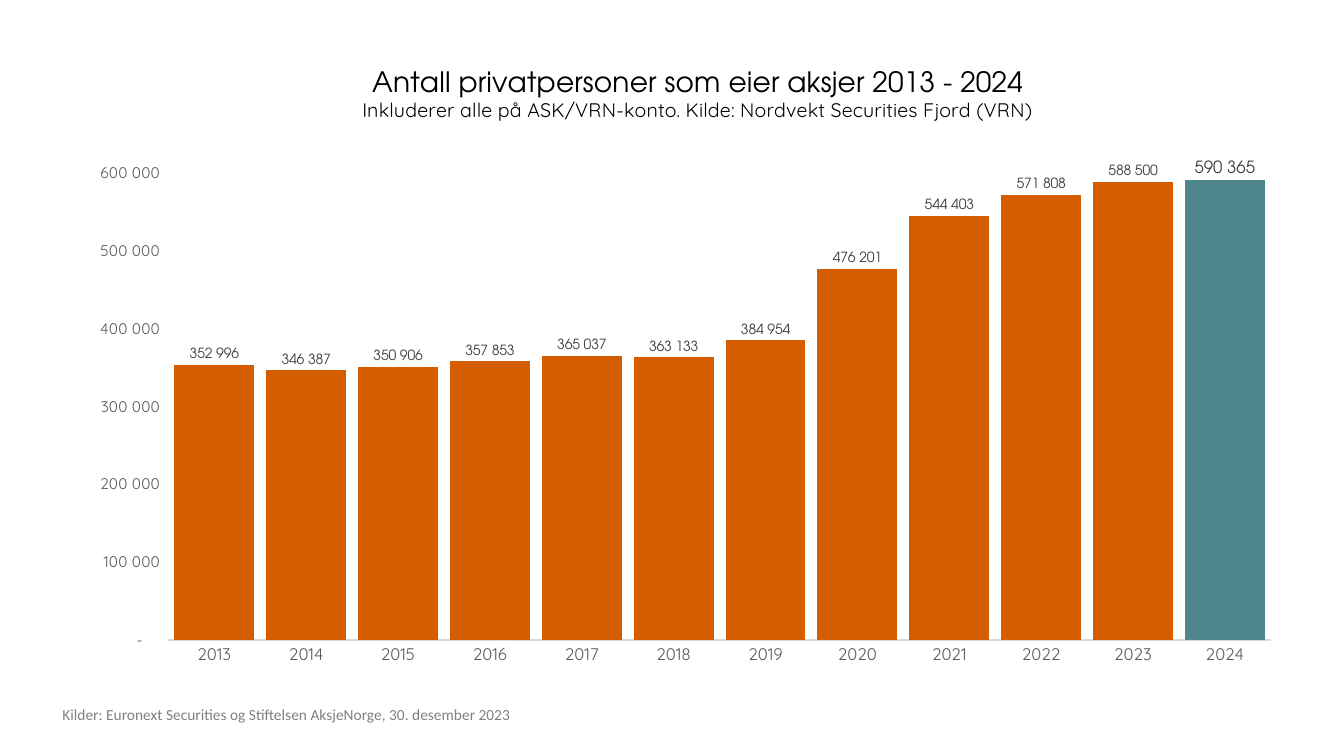
from lxml import etree
from pptx import Presentation
from pptx.chart.data import CategoryChartData
from pptx.dml.color import RGBColor
from pptx.enum.chart import XL_CHART_TYPE, XL_LABEL_POSITION, XL_TICK_MARK
from pptx.enum.text import MSO_ANCHOR
from pptx.oxml.ns import qn
from pptx.util import Inches, Pt

COLUMN = XL_CHART_TYPE.COLUMN_CLUSTERED
OUTSIDE_END = XL_LABEL_POSITION.OUTSIDE_END
NO_TICK = XL_TICK_MARK.NONE
MIDDLE = MSO_ANCHOR.MIDDLE

# Content
TITLE = [
    ("Antall privatpersoner som eier aksjer 2013 - 2024", "TeX Gyre Adventor", 20),
    ("Inkluderer alle på ASK/VRN-konto. Kilde: Nordvekt Securities Fjord (VRN)", "Quicksand", 14),
]
SOURCE = "Kilder: Euronext Securities og Stiftelsen AksjeNorge, 30. desember 2023"
FIRST_YEAR = 2013
OWNERS = [352996, 346387, 350906, 357853, 365037, 363133,
          384954, 476201, 544403, 571808, 588500, 590365]
NUMBER_FORMAT = r'_-* #\ ##0_-;\-* #\ ##0_-;_-* "-"??_-;_-'
COLORS = {"title": "000000", "axis": "595959", "line": "D9D9D9", "label": "404040",
          "bar": "D45D00", "latest": "4F868E", "source": "808080"}

# Places: inches for the slide, shares of the chart for its parts
SLIDE_W, SLIDE_H = 13.33, 7.5
MARGIN = 0.52
CHART_W, CHART_H = SLIDE_W - 0.96, 6.31
SOURCE_BOX = (MARGIN, 6.94, 4.84, 0.29)
PLOT = {"x": 0.093, "y": 0.189, "w": 0.884, "h": 0.735}
TITLE_PLACE = {"x": 0.246, "y": 0.022}


def color(name):
    return RGBColor.from_string(COLORS[name])


def style(font, name, size, color_name):
    font.name, font.size, font.bold = name, Pt(size), False
    font.color.rgb = color(color_name)


def place(element, index, shares, inner=False):
    """Give a chart part a manual layout at the given child index."""
    for old in element.findall(qn("c:layout")):
        element.remove(old)
    layout = etree.Element(qn("c:layout"))
    manual = etree.SubElement(layout, qn("c:manualLayout"))
    if inner:
        etree.SubElement(manual, qn("c:layoutTarget")).set("val", "inner")
    for key in ("x", "y"):
        etree.SubElement(manual, qn(f"c:{key}Mode")).set("val", "edge")
    for key, share in shares.items():
        etree.SubElement(manual, qn(f"c:{key}")).set("val", str(share))
    element.insert(index, layout)


prs = Presentation()
prs.slide_width, prs.slide_height = Inches(SLIDE_W), Inches(SLIDE_H)
s = prs.slides.add_slide(prs.slide_layouts[6])

# Chart
data = CategoryChartData(number_format=NUMBER_FORMAT)
data.categories = [str(FIRST_YEAR + i) for i in range(len(OWNERS))]
data.add_series("Series 1", OWNERS)
chart = s.shapes.add_chart(COLUMN, Inches(MARGIN), Inches(MARGIN),
                           Inches(CHART_W), Inches(CHART_H), data).chart
style(chart.font, "Calibri", 10, "title")
chart.has_legend = False

# Title
chart.has_title = True
tf = chart.chart_title.text_frame
tf.text = "\n".join(text for text, _, _ in TITLE)
for p, (_, name, size) in zip(tf.paragraphs, TITLE):
    style(p.font, name, size, "title")
    style(p.runs[0].font, name, size, "title")
chart.chart_title.include_in_layout = False
place(chart.chart_title.element, 1, TITLE_PLACE)
place(chart.element.find(".//" + qn("c:plotArea")), 0, PLOT, inner=True)

# Axes
years, amounts = chart.category_axis, chart.value_axis
for axis, size in ((years, 12), (amounts, 11)):
    axis.major_tick_mark = axis.minor_tick_mark = NO_TICK
    axis.has_major_gridlines = False
    style(axis.tick_labels.font, "Quicksand", size, "axis")
years.format.line.color.rgb = color("line")
years.format.line.width = Pt(0.75)
amounts.format.line.fill.background()
amounts.minimum_scale, amounts.maximum_scale, amounts.major_unit = 0, 600000, 100000
amounts.tick_labels.number_format = NUMBER_FORMAT
amounts.tick_labels.number_format_is_linked = False

# Columns, with the latest year set apart
plot = chart.plots[0]
plot.gap_width, plot.overlap, plot.vary_by_categories = 15, -27, False
owners = plot.series[0]
owners.invert_if_negative = False
latest = owners.points[len(OWNERS) - 1]
for part, name in ((owners, "bar"), (latest, "latest")):
    part.format.fill.solid()
    part.format.fill.fore_color.rgb = color(name)

# Value labels
labels = owners.data_labels
labels.show_value = True
labels.number_format, labels.number_format_is_linked = NUMBER_FORMAT, False
for label, size in ((labels, 10), (latest.data_label, 12)):
    style(label.font, "TeX Gyre Adventor", size, "label")
    label.position = OUTSIDE_END

# Source line
tf = s.shapes.add_textbox(*map(Inches, SOURCE_BOX)).text_frame
tf.word_wrap = True
tf.vertical_anchor = MIDDLE
tf.text = SOURCE
style(tf.paragraphs[0].runs[0].font, "Calibri", 11, "source")

prs.save("out.pptx")
